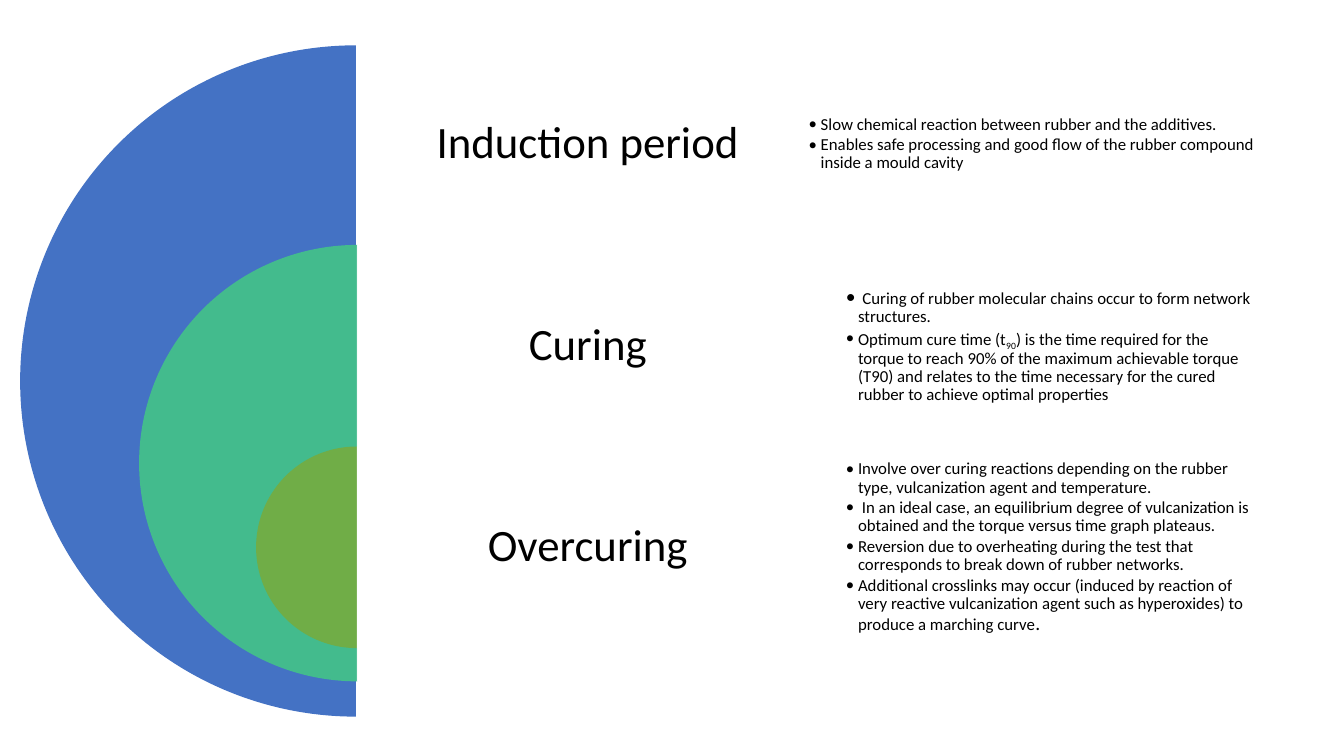
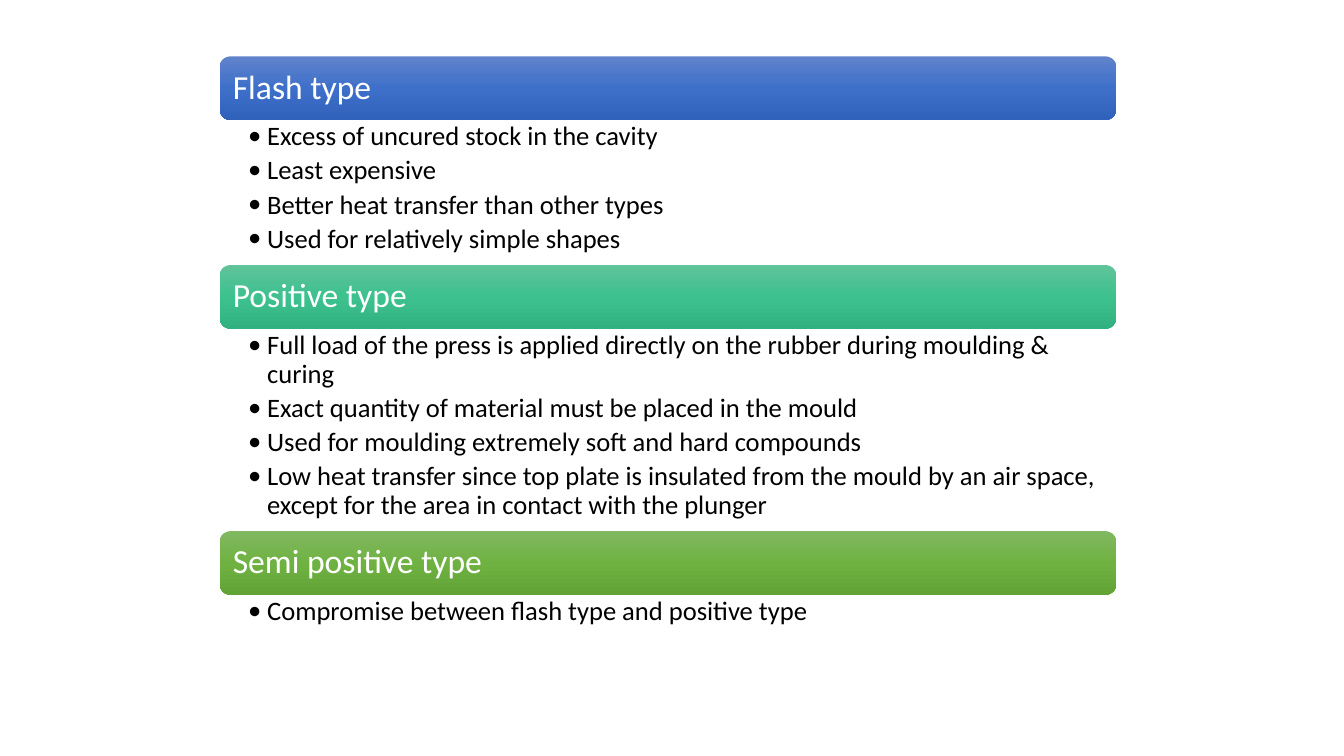
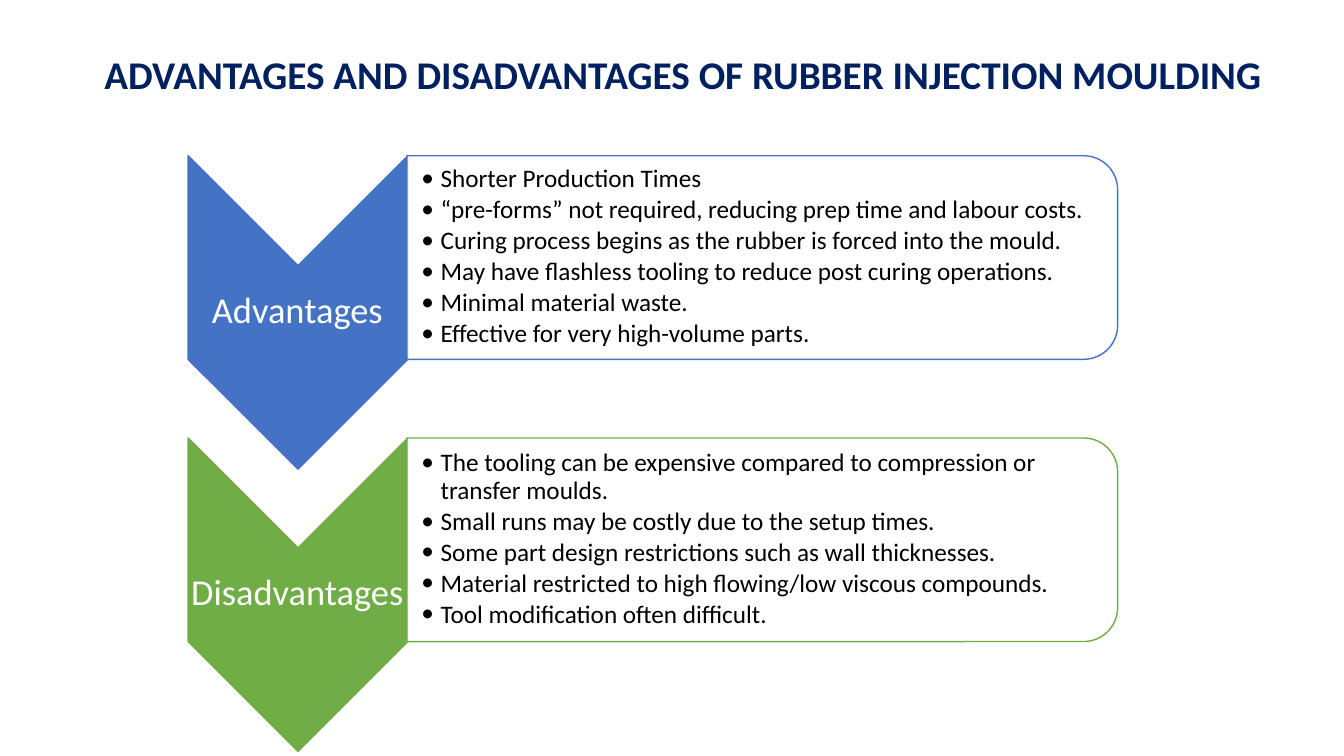
"""Build three slides on rubber curing, mould types and injection moulding."""
from copy import deepcopy
from dataclasses import dataclass
from typing import NamedTuple, Optional, Sequence, Union

from lxml.etree import SubElement
from pptx import Presentation
from pptx.dml.color import RGBColor
from pptx.enum.shapes import MSO_SHAPE
from pptx.enum.text import MSO_ANCHOR, MSO_AUTO_SIZE, PP_ALIGN
from pptx.oxml.ns import qn
from pptx.shapes.autoshape import Shape
from pptx.slide import Slide
from pptx.text.text import TextFrame
from pptx.util import Emu, Pt

EMU_PER_PX = 9144


@dataclass(frozen=True)
class Theme:
    """Hold the colours, font and type sizes of the deck."""
    font: str = "Calibri"
    blue: str = "4472C4"
    teal: str = "43BB8D"
    green: str = "70AD47"
    navy: str = "002060"
    white: str = "FFFFFF"
    black: str = "000000"
    blue_band: tuple[str, ...] = ("6183CB", "3E70CA", "3062BB")
    teal_band: tuple[str, ...] = ("60C39A", "3DC18F", "31B080")
    green_band: tuple[str, ...] = ("81B861", "6FB242", "62A336")
    stage_size: int = 32
    title_size: int = 28
    verdict_size: int = 26
    band_size: int = 24
    mould_size: int = 19
    point_size: int = 18
    accent_size: int = 14
    detail_size: int = 12
    line_spacing: float = 0.9
    heading_gap: float = 0.35


THEME = Theme()


class Box(NamedTuple):
    """Place a rectangle in px."""
    left: int
    top: int
    width: int
    height: int


class Span(NamedTuple):
    """Describe a stretch of text with its own size or baseline."""
    text: str
    size: Optional[int] = None
    baseline: int = 0


Line = Union[str, tuple[Span, ...]]


@dataclass(frozen=True)
class Stage:
    """Describe one stage of the cure."""
    name: str
    color: str
    pie_left: int
    pie_top: int
    diameter: int
    detail_left: int
    detail_width: int
    details: tuple[Line, ...]


@dataclass(frozen=True)
class Mould:
    """Describe one type of compression mould."""
    name: str
    gradient: tuple[str, ...]
    body_height: int
    features: tuple[str, ...]


@dataclass(frozen=True)
class Verdict:
    """Describe one side of the comparison."""
    name: str
    color: str
    points: tuple[str, ...]


STAGES = (
    Stage("Induction period", THEME.blue, 20, 45, 666, 775, 531, (
        "Slow chemical reaction between rubber and the additives.",
        "Enables safe processing and good flow of the rubber compound inside a mould cavity",
    )),
    Stage("Curing", THEME.teal, 138, 243, 433, 812, 458, (
        (Span(" ", THEME.accent_size),
         Span("Curing of rubber molecular chains occur to form network structures.")),
        (Span("Optimum cure time (t"),
         Span("90", baseline=-25000),
         Span(") is the time required for the torque to reach 90% of the maximum achievable "
              "torque (T90) and relates to the time necessary for the cured rubber to achieve "
              "optimal properties")),
    )),
    Stage("Overcuring", THEME.green, 254, 443, 200, 812, 458, (
        "Involve over curing reactions depending on the rubber type, vulcanization agent "
        "and temperature.",
        " In an ideal case, an equilibrium degree of vulcanization is obtained and the torque "
        "versus time graph plateaus.",
        "Reversion due to overheating during the test that corresponds to break down of "
        "rubber networks.",
        (Span("Additional crosslinks may occur (induced by reaction of very reactive "
              "vulcanization agent such as hyperoxides) to produce a marching curve"),
         Span(".", THEME.accent_size)),
    )),
)

MOULDS = (
    Mould("Flash type", THEME.blue_band, 144, (
        "Excess of uncured stock in the cavity",
        "Least expensive",
        "Better heat transfer than other types",
        "Used for relatively simple shapes",
    )),
    Mould("Positive type", THEME.teal_band, 201, (
        "Full load of the press is applied directly on the rubber during moulding & curing",
        "Exact quantity of material must be placed in the mould",
        "Used for moulding extremely soft and hard compounds",
        "Low heat transfer since top plate is insulated from the mould by an air space, "
        "except for the area in contact with the plunger",
    )),
    Mould("Semi positive type", THEME.green_band, 43, (
        "Compromise between flash type and positive type",
    )),
)

VERDICTS = (
    Verdict("Advantages", THEME.blue, (
        "Shorter Production Times",
        "“pre-forms” not required, reducing prep time and labour costs.",
        "Curing process begins as the rubber is forced into the mould.",
        "May have flashless tooling to reduce post curing operations.",
        "Minimal material waste.",
        "Effective for very high-volume parts.",
    )),
    Verdict("Disadvantages", THEME.green, (
        "The tooling can be expensive compared to compression or transfer moulds.",
        "Small runs may be costly due to the setup times.",
        "Some part design restrictions such as wall thicknesses.",
        "Material restricted to high flowing/low viscous compounds.",
        "Tool modification often difficult.",
    )),
)


def px(length: int) -> Emu:
    """Turn px into EMU."""
    return Emu(length * EMU_PER_PX)


def write_text(
    frame: TextFrame,
    lines: Sequence[Line],
    *,
    size: int,
    color: str = THEME.black,
    bold: bool = False,
    align: PP_ALIGN = PP_ALIGN.LEFT,
    anchor: MSO_ANCHOR = MSO_ANCHOR.MIDDLE,
    insets: tuple[int, int, int, int] = (10, 5, 10, 5),
    gap: float = 0,
    bullet_indent: int = 0,
) -> None:
    """Fill a frame with formatted paragraphs, bulleted when an indent is given."""
    frame.word_wrap = True
    frame.auto_size = MSO_AUTO_SIZE.NONE
    frame.vertical_anchor = anchor
    frame.margin_left, frame.margin_top, frame.margin_right, frame.margin_bottom = map(px, insets)
    for index, line in enumerate(lines):
        paragraph = frame.add_paragraph() if index else frame.paragraphs[0]
        paragraph.alignment = align
        paragraph.line_spacing = THEME.line_spacing
        paragraph.space_after = Pt(round(size * gap, 1))
        if bullet_indent:
            paragraph.level = 1
            properties = paragraph._p.get_or_add_pPr()
            properties.set("marL", str(px(bullet_indent)))
            properties.set("indent", str(-px(bullet_indent)))
            SubElement(properties, qn("a:buFont")).set("typeface", THEME.font)
            SubElement(properties, qn("a:buChar")).set("char", "•")
        for span in (Span(line),) if isinstance(line, str) else line:
            run = paragraph.add_run()
            run.text = span.text
            run.font.name = THEME.font
            run.font.size = Pt(span.size or size)
            run.font.bold = bold
            run.font.color.rgb = RGBColor.from_string(color)
            if span.baseline:
                run.font._element.set("baseline", str(span.baseline))


def add_text_frame(slide: Slide, box: Box) -> TextFrame:
    """Add a text box and return its frame."""
    return slide.shapes.add_textbox(*map(px, box)).text_frame


def add_panel(
    slide: Slide,
    kind: MSO_SHAPE,
    box: Box,
    fill: str,
    *,
    line: Optional[str] = None,
    opacity: int = 100,
    rotation: int = 0,
) -> Shape:
    """Add a flat preset shape."""
    panel = slide.shapes.add_shape(kind, *map(px, box))
    panel.shadow.inherit = False
    panel.rotation = rotation
    panel.fill.solid()
    panel.fill.fore_color.rgb = RGBColor.from_string(fill)
    if opacity < 100:
        tint = panel._element.spPr.find(qn("a:solidFill")).find(qn("a:srgbClr"))
        SubElement(tint, qn("a:alpha")).set("val", str(opacity * 1000))
    if line:
        panel.line.color.rgb = RGBColor.from_string(line)
        panel.line.width = Pt(1)
    else:
        panel.line.fill.background()
    return panel


def shade(panel: Shape, colors: Sequence[str]) -> None:
    """Give a panel an even gradient from top to bottom."""
    panel.fill.gradient()
    panel.fill.gradient_angle = 270
    stop_list = panel._element.spPr.find(qn("a:gradFill")).find(qn("a:gsLst"))
    while len(stop_list) < len(colors):
        stop_list.append(deepcopy(stop_list[0]))
    for index, (stop, color) in enumerate(zip(panel.fill.gradient_stops, colors)):
        stop.color.rgb = RGBColor.from_string(color)
        stop.position = index / (len(colors) - 1)


def draw_stages(slide: Slide) -> None:
    """Draw nested half discs with a heading and details for each stage."""
    axis, first_top, row_height = 354, 43, 200
    for index, stage in enumerate(STAGES):
        top = first_top + index * row_height
        disc = Box(stage.pie_left, stage.pie_top, stage.diameter, stage.diameter)
        half_disc = add_panel(slide, MSO_SHAPE.PIE, disc, stage.color)
        half_disc.adjustments[0], half_disc.adjustments[1] = 54, 162
        add_panel(slide, MSO_SHAPE.RECTANGLE, Box(axis, top, 915, stage.diameter),
                  THEME.white, opacity=90)
        write_text(add_text_frame(slide, Box(axis, top, 458, row_height)), [stage.name],
                   size=THEME.stage_size, align=PP_ALIGN.CENTER,
                   insets=(13, 13, 13, 13), gap=THEME.heading_gap)
        detail_box = Box(stage.detail_left, top, stage.detail_width, row_height)
        write_text(add_text_frame(slide, detail_box), stage.details, size=THEME.detail_size,
                   insets=(27, 27, 27, 27), gap=0.15, bullet_indent=12)


def draw_moulds(slide: Slide) -> None:
    """Stack a band and its features for each mould type."""
    left, top, width, band_height = 218, 56, 889, 63
    for mould in MOULDS:
        band = add_panel(slide, MSO_SHAPE.ROUNDED_RECTANGLE,
                         Box(left, top, width, band_height), mould.gradient[0])
        shade(band, mould.gradient)
        write_text(band.text_frame, [mould.name], size=THEME.band_size, color=THEME.white,
                   insets=(10, 10, 10, 10), gap=THEME.heading_gap)
        top += band_height
        write_text(add_text_frame(slide, Box(left, top, width, mould.body_height)),
                   mould.features, size=THEME.mould_size, anchor=MSO_ANCHOR.TOP,
                   insets=(28, 3, 19, 3), gap=0.2, bullet_indent=19)
        top += mould.body_height


def draw_verdicts(slide: Slide) -> None:
    """Draw a title and a chevron with its points for each side."""
    title = slide.shapes.title
    title.left, title.top, title.width, title.height = map(px, Box(66, 36, 1222, 81))
    write_text(title.text_frame, ["ADVANTAGES AND DISADVANTAGES OF RUBBER INJECTION MOULDING"],
               size=THEME.title_size, color=THEME.navy, bold=True, align=PP_ALIGN.CENTER)
    row_height = 280
    for index, verdict in enumerate(VERDICTS):
        offset = index * row_height
        add_panel(slide, MSO_SHAPE.CHEVRON, Box(140, 201 + offset, 311, 218),
                  verdict.color, line=verdict.color, rotation=90)
        write_text(add_text_frame(slide, Box(186, 263 + offset, 218, 93)), [verdict.name],
                   size=THEME.verdict_size, color=THEME.white, align=PP_ALIGN.CENTER,
                   insets=(2, 2, 2, 2), gap=THEME.heading_gap)
        add_panel(slide, MSO_SHAPE.ROUND_2_SAME_RECTANGLE, Box(655, -97 + offset, 202, 705),
                  THEME.white, line=verdict.color, opacity=90, rotation=90)
        write_text(add_text_frame(slide, Box(404, 164 + offset, 695, 182)), verdict.points,
                   size=THEME.point_size, insets=(14, 1, 1, 1), gap=0.15, bullet_indent=19)


def main() -> None:
    """Build and save the deck."""
    deck = Presentation()
    deck.slide_width, deck.slide_height = px(1333), px(750)
    title_only, blank = deck.slide_layouts[5], deck.slide_layouts[6]
    draw_stages(deck.slides.add_slide(blank))
    draw_moulds(deck.slides.add_slide(blank))
    draw_verdicts(deck.slides.add_slide(title_only))
    deck.save("out.pptx")


if __name__ == "__main__":
    main()
